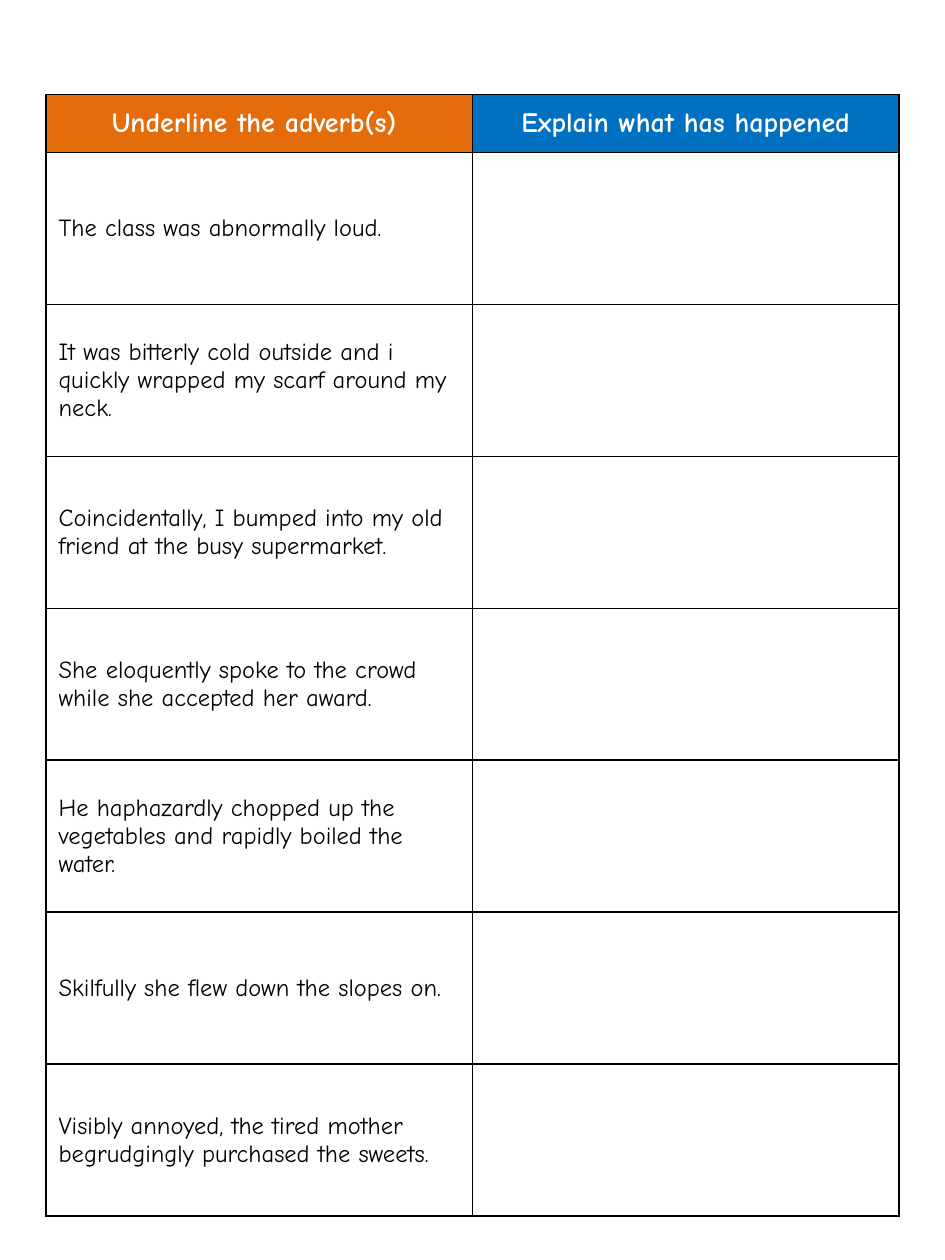
"""Build a one-page adverb worksheet as a two-column table."""
from dataclasses import dataclass

import pptx
import pptx.dml.color
import pptx.enum.text
import pptx.oxml
import pptx.oxml.ns
import pptx.table
import pptx.util

Inches = pptx.util.Inches
Pt = pptx.util.Pt
RGBColor = pptx.dml.color.RGBColor
Align = pptx.enum.text.PP_ALIGN

BLACK = RGBColor(0x00, 0x00, 0x00)
WHITE = RGBColor(0xFF, 0xFF, 0xFF)
ORANGE = RGBColor(0xE4, 0x6C, 0x0A)
BLUE = RGBColor(0x00, 0x70, 0xC0)

FONT_NAME = "Comic Neue"
HEADER_FONT = {"name": FONT_NAME, "size": Pt(16), "bold": True}
BODY_FONT = {"name": FONT_NAME, "size": Pt(14), "bold": False}
COLUMN_WIDTH = Inches(3.385)
HEADER_HEIGHT = Inches(0.46)
ROW_HEIGHT = Inches(1.206)
BORDER_WIDTH = Pt(1)

SENTENCES = [
    "The class was abnormally loud.",
    "It was bitterly cold outside and i quickly wrapped my scarf around my neck.",
    "Coincidentally, I bumped into my old friend at the busy supermarket.",
    "She eloquently spoke to the crowd while she accepted her award.",
    "He haphazardly chopped up the vegetables and rapidly boiled the water.",
    "Skilfully she flew down the slopes on.",
    "Visibly annoyed, the tired mother begrudgingly purchased the sweets.",
]


@dataclass(frozen=True)
class CellContent:
    """Text and look of one table cell."""

    text: str
    fill: RGBColor = WHITE
    color: RGBColor = BLACK
    alignment: Align = Align.LEFT
    is_header: bool = False


def header(text: str, fill: RGBColor) -> CellContent:
    """Return the content of a column heading."""
    return CellContent(text, fill, WHITE, Align.CENTER, True)


def add_borders(cell: pptx.table._Cell) -> None:
    """Outline all four sides of a cell."""
    properties = cell._tc.get_or_add_tcPr()
    for side in ("lnL", "lnR", "lnT", "lnB"):
        properties.append(pptx.oxml.parse_xml(
            f'<a:{side} {pptx.oxml.ns.nsdecls("a")} w="{BORDER_WIDTH}">'
            f'<a:solidFill><a:srgbClr val="{BLACK}"/></a:solidFill></a:{side}>'
        ))


def fill_cell(cell: pptx.table._Cell, content: CellContent) -> None:
    """Write and format one cell."""
    add_borders(cell)
    cell.fill.solid()
    cell.fill.fore_color.rgb = content.fill
    cell.vertical_anchor = pptx.enum.text.MSO_ANCHOR.MIDDLE
    if not content.text:
        return
    paragraph = cell.text_frame.paragraphs[0]
    paragraph.alignment = content.alignment
    run = paragraph.add_run()
    run.text = content.text
    run.font.color.rgb = content.color
    font_values = HEADER_FONT if content.is_header else BODY_FONT
    for name, value in font_values.items():
        setattr(run.font, name, value)


def main() -> None:
    """Create the worksheet and save it."""
    presentation = pptx.Presentation()
    presentation.slide_width = Inches(7.5)
    presentation.slide_height = Inches(10)
    slide = presentation.slides.add_slide(presentation.slide_layouts[6])

    rows = [[header("Underline the adverb(s) ", ORANGE),
             header("Explain what has happened", BLUE)]]
    rows += [[CellContent(sentence), CellContent("")] for sentence in SENTENCES]

    table = slide.shapes.add_table(
        len(rows), 2, Inches(0.365), Inches(0.75), COLUMN_WIDTH * 2,
        HEADER_HEIGHT + ROW_HEIGHT * len(SENTENCES),
    ).table
    table.first_row = False
    table.horz_banding = False
    for column in table.columns:
        column.width = COLUMN_WIDTH
    for index, contents in enumerate(rows):
        table.rows[index].height = ROW_HEIGHT if index else HEADER_HEIGHT
        for cell, content in zip(table.rows[index].cells, contents):
            fill_cell(cell, content)

    presentation.save("out.pptx")


if __name__ == "__main__":
    main()
